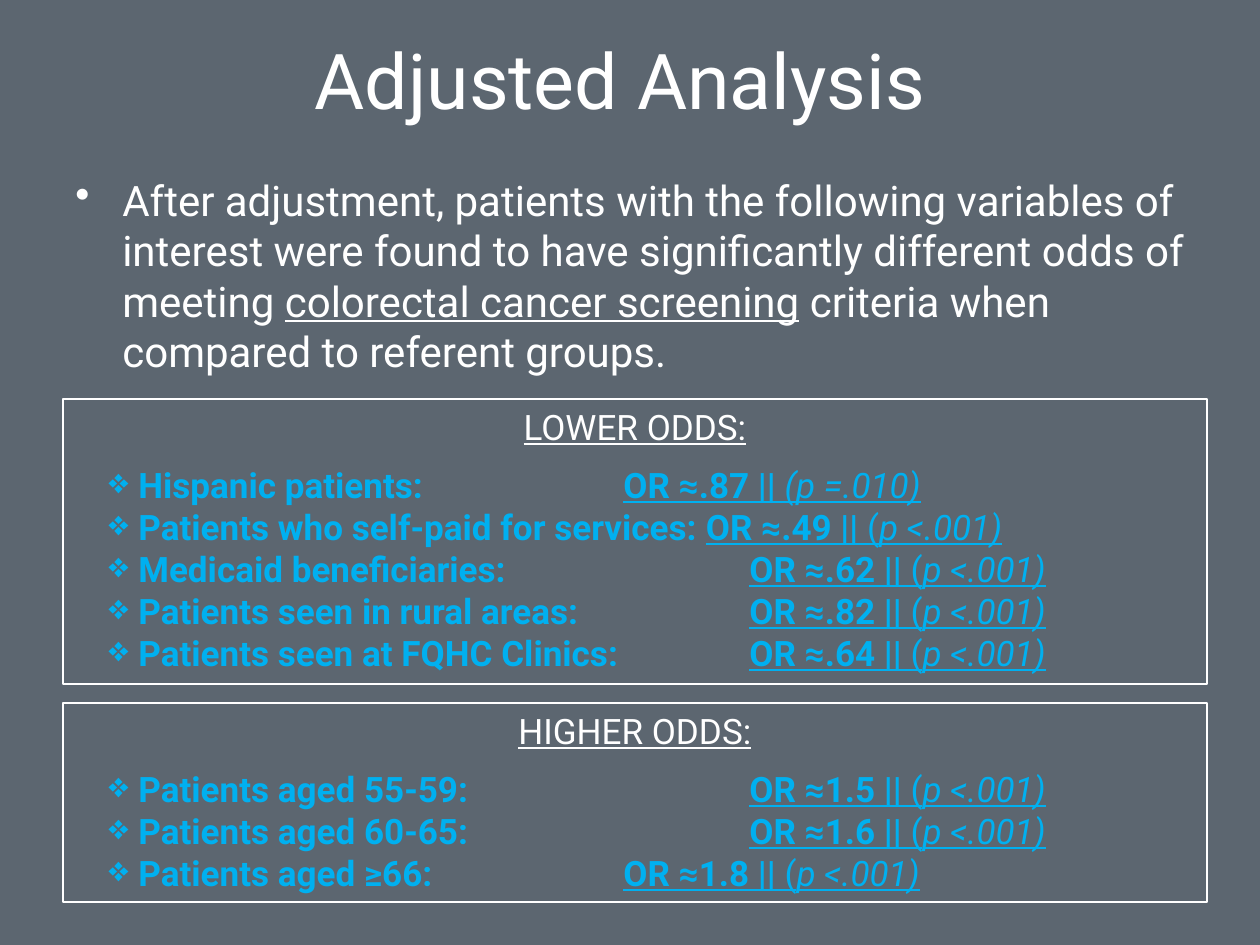
"""Build the adjusted analysis slide with lower and higher odds panels."""
from dataclasses import dataclass

from lxml import etree
from pptx import Presentation
from pptx import util as u
from pptx.dml.color import RGBColor
from pptx.enum import shapes, text
from pptx.oxml import ns

PX = 914400 / 126


def emu(px):
    return u.Emu(round(px * PX))


@dataclass(frozen=True)
class Theme:
    font: str = "Roboto"
    background: str = "5C6670"
    ink: str = "FFFFFF"
    accent: str = "00B0F0"
    title: int = 44
    body: int = 24
    panel: int = 20


class Deck:
    def __init__(self, prs, theme):
        self.theme = theme
        self.s = prs.slides.add_slide(prs.slide_layouts[6])
        fill = self.s.background.fill
        fill.solid()
        fill.fore_color.rgb = RGBColor.from_string(theme.background)

    def style(self, p, size, color, align=text.PP_ALIGN.LEFT):
        p.alignment = align
        p.font.name = self.theme.font
        p.font.size = u.Pt(size)
        p.font.color.rgb = RGBColor.from_string(color)

    def run(self, p, words, bold=None, italic=None, underline=None):
        r = p.add_run()
        r.text = words
        r.font.bold, r.font.italic, r.font.underline = bold, italic, underline

    def bullet(self, p, char, margin, indent=None, tab=None):
        pPr = p._p.get_or_add_pPr()
        pPr.set("marL", str(emu(margin)))
        if indent is not None:
            pPr.set("indent", str(emu(indent)))
        defaults = pPr.find(ns.qn("a:defRPr"))
        mark = etree.Element(ns.qn("a:buChar"), char=char)
        defaults.addprevious(mark)
        if tab:
            tabs = etree.Element(ns.qn("a:tabLst"))
            etree.SubElement(tabs, ns.qn("a:tab"), pos=str(emu(tab)), algn="l")
            defaults.addprevious(tabs)

    def textbox(self, x, y, w, h, anchor):
        tf = self.s.shapes.add_textbox(*map(emu, (x, y, w, h))).text_frame
        tf.word_wrap = True
        tf.vertical_anchor = anchor
        return tf.paragraphs[0]

    def title(self, words, x, y, w, h):
        p = self.textbox(x, y, w, h, text.MSO_ANCHOR.MIDDLE)
        self.style(p, self.theme.title, self.theme.ink, text.PP_ALIGN.CENTER)
        self.run(p, words)

    def body(self, before, term, after, x, y, w, h):
        p = self.textbox(x, y, w, h, text.MSO_ANCHOR.TOP)
        self.style(p, self.theme.body, self.theme.ink)
        p.space_before = u.Pt(4.8)
        self.bullet(p, "•", 47, -47)
        self.run(p, before)
        self.run(p, term, underline=True)
        self.run(p, after)

    def panel(self, heading, rows, x, y, w, h):
        sp = self.s.shapes.add_shape(
            shapes.MSO_SHAPE.RECTANGLE, *map(emu, (x, y, w, h)))
        sp.shadow.inherit = False
        sp.fill.background()
        sp.line.color.rgb = RGBColor.from_string(self.theme.ink)
        sp.line.width = u.Pt(0.75)
        tf = sp.text_frame
        tf.word_wrap = True
        tf.vertical_anchor = text.MSO_ANCHOR.TOP
        p = tf.paragraphs[0]
        self.style(p, self.theme.panel, self.theme.ink, text.PP_ALIGN.CENTER)
        p.space_after = u.Pt(9.4)
        self.run(p, heading, underline=True)
        for row in rows:
            self.odds(tf.add_paragraph(), *row)

    def odds(self, p, group, ratio, tab, opening="(", value="p <.001)"):
        self.style(p, self.theme.panel, self.theme.accent)
        self.bullet(p, "❖", 63, tab=tab)
        self.run(p, group + ("\t" if tab else " "), bold=True)
        self.run(p, f"OR ≈{ratio} || ", bold=True, underline=True)
        if opening:
            self.run(p, opening, underline=True)
        self.run(p, value, italic=True, underline=True)


NEAR, FAR = 548, 674
LOWER = [
    ("Hispanic patients:", ".87", NEAR, "", "(p =.010)"),
    ("Patients who self-paid for services:", ".49", None),
    ("Medicaid beneficiaries:", ".62", FAR),
    ("Patients seen in rural areas:", ".82", FAR),
    ("Patients seen at FQHC Clinics:", ".64", FAR),
]
HIGHER = [
    ("Patients aged 55-59:", "1.5", FAR),
    ("Patients aged 60-65:", "1.6", FAR),
    ("Patients aged ≥66:", "1.8", NEAR),
]


def main():
    prs = Presentation()
    prs.slide_width, prs.slide_height = emu(1260), emu(945)
    deck = Deck(prs, Theme())
    left, width = 63, 1144
    deck.title("Adjusted Analysis ", left, 0, 1134, 158)
    deck.body(
        "After adjustment, patients with the following variables of interest "
        "were found to have significantly different odds of meeting ",
        "colorectal cancer screening",
        " criteria when compared to referent groups.",
        left, 168, width, 735)
    deck.panel("LOWER ODDS:", LOWER, left, 399, width, 285)
    deck.panel("HIGHER ODDS:", HIGHER, left, 703, width, 199)
    prs.save("out.pptx")


if __name__ == "__main__":
    main()
